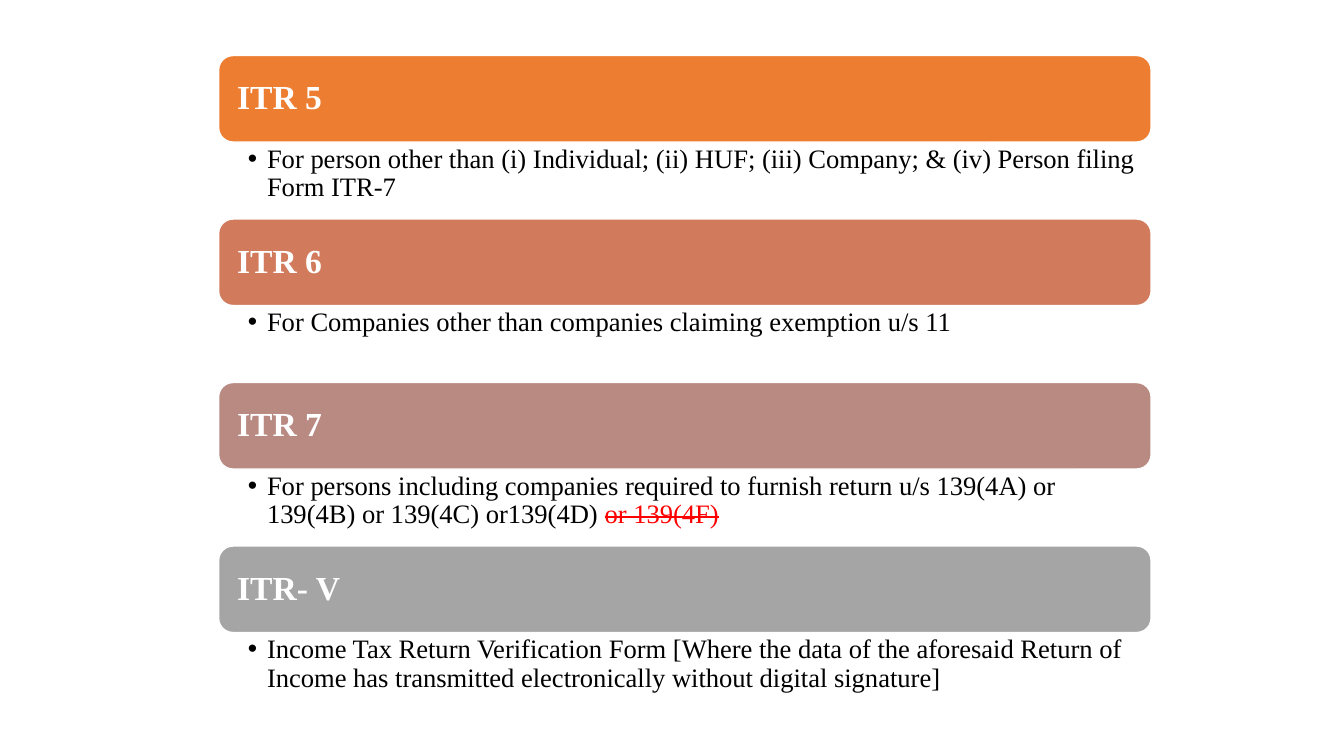
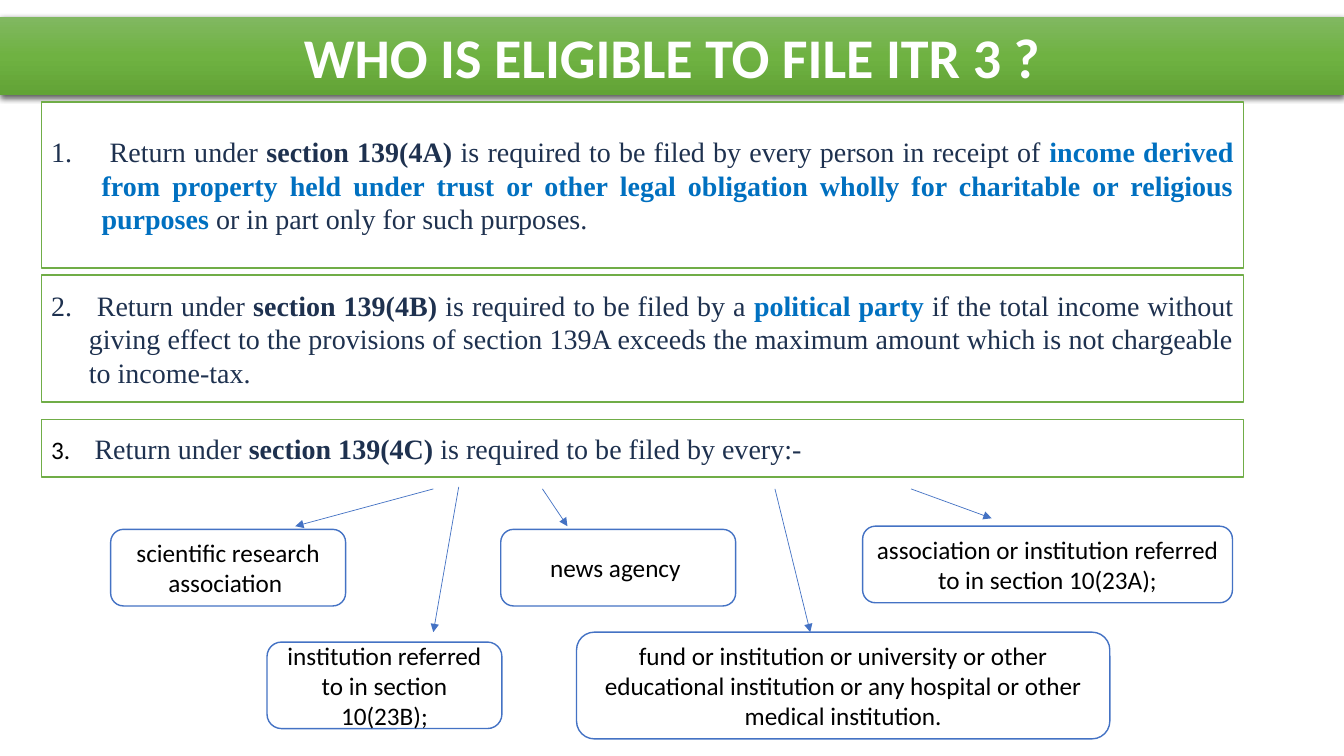
from lxml.etree import SubElement
from pptx import Presentation
from pptx.dml.color import RGBColor
from pptx.enum.shapes import MSO_CONNECTOR, MSO_SHAPE
from pptx.enum.text import MSO_ANCHOR, MSO_AUTO_SIZE, PP_ALIGN
from pptx.oxml.ns import qn
from pptx.util import Cm, Pt

SERIF, SANS = "Times New Roman", "Calibri"
WHITE, BLACK, RED = "FFFFFF", "000000", "FF0000"
GREEN, BLUE, NAVY, ACCENT = "70AD47", "4472C4", "1E314F", "0070C0"
BAND = [(0, "81B861"), (50, "6FB242"), (100, "62A336")]


def rgb(value):
    return RGBColor.from_string(value)


def add(parent, tag, **attrs):
    return SubElement(parent, qn(tag), {k: str(v) for k, v in attrs.items()})


class Deck:
    def __init__(self):
        self.prs = Presentation()
        self.prs.slide_width, self.prs.slide_height = Cm(33.87), Cm(19.05)
        self.s = None

    def slide(self, layout):
        self.s = self.prs.slides.add_slide(self.prs.slide_layouts[layout])

    def add_text(self, sp, runs, align=PP_ALIGN.LEFT, anchor=MSO_ANCHOR.MIDDLE, insets=None):
        tf = sp.text_frame
        tf.word_wrap, tf.auto_size, tf.vertical_anchor = True, MSO_AUTO_SIZE.NONE, anchor
        if insets:
            tf.margin_left, tf.margin_top, tf.margin_right, tf.margin_bottom = map(Cm, insets)
        p = tf.paragraphs[0]
        p.alignment = align
        for text, font, size, color, *marks in runs:
            r = p.add_run()
            r.text = text
            r.font.name, r.font.size = font, Pt(size)
            r.font.color.rgb = rgb(color)
            r.font.bold = "bold" in marks
            if "strike" in marks:
                r.font._element.set("strike", "sngStrike")
        return p

    def indent(self, p, width):
        pPr = p._p.get_or_add_pPr()
        pPr.set("marL", str(Cm(width)))
        pPr.set("indent", str(-Cm(width)))
        return pPr

    def title(self, text):
        sp = self.s.shapes.title
        sp.left, sp.top, sp.width, sp.height = Cm(0), Cm(0.43), self.prs.slide_width, Cm(1.96)
        spPr = sp._element.spPr
        grad = add(spPr, "a:gradFill", rotWithShape=1)
        stops = add(grad, "a:gsLst")
        for pos, color in BAND:
            add(add(stops, "a:gs", pos=pos * 1000), "a:srgbClr", val=color)
        add(grad, "a:lin", ang=5400000, scaled=0)
        shadow = add(add(spPr, "a:effectLst"), "a:outerShdw", blurRad=Pt(4.5), dist=Pt(1.5),
                     dir=5400000, algn="ctr", rotWithShape=0)
        add(add(shadow, "a:srgbClr", val=BLACK), "a:alpha", val=63000)
        self.add_text(sp, [(text, SANS, 40, WHITE, "bold")], PP_ALIGN.CENTER)

    def box(self, kind, at, fill, line):
        sp = self.s.shapes.add_shape(kind, *map(Cm, at))
        sp.shadow.inherit = False
        sp.fill.solid()
        sp.fill.fore_color.rgb = rgb(fill)
        sp.line.color.rgb = rgb(line)
        sp.line.width = Pt(1)
        return sp

    def form(self, top, name, color, runs):
        left, width, bar, body = 5.51, 23.5, 2.18, 1.93
        sp = self.box(MSO_SHAPE.ROUNDED_RECTANGLE, (left, top, width, bar), color, WHITE)
        p = self.add_text(sp, [(name, SERIF, 24, WHITE, "bold")], insets=(0.36, 0.25, 0.36, 0.25))
        p.line_spacing = 0.9
        tb = self.s.shapes.add_textbox(*map(Cm, (left, top + bar, width, body)))
        p = self.add_text(tb, runs, anchor=MSO_ANCHOR.TOP, insets=(0.74, 0.08, 0.38, 0.08))
        p.line_spacing = 0.9
        pPr = self.indent(p, 0.48)
        add(pPr, "a:buFont", typeface="Arial")
        add(pPr, "a:buChar", char="•")

    def clause(self, number, top, height, indent, runs, align):
        sp = self.box(MSO_SHAPE.RECTANGLE, (1.04, top, 30.3, height), WHITE, GREEN)
        pPr = self.indent(self.add_text(sp, runs, align), indent)
        add(pPr, "a:buFont", typeface="+mj-lt")
        add(pPr, "a:buAutoNum", type="arabicPeriod", startAt=number)

    def filer(self, at, text):
        sp = self.box(MSO_SHAPE.FLOWCHART_ALTERNATE_PROCESS, at, WHITE, BLUE)
        self.add_text(sp, [(text, SANS, 18, BLACK)], PP_ALIGN.CENTER)

    def arrow(self, *ends):
        cx = self.s.shapes.add_connector(MSO_CONNECTOR.STRAIGHT, *map(Cm, ends))
        cx.line.color.rgb = rgb(BLUE)
        cx.line.width = Pt(0.5)
        spPr = cx._element.spPr
        add(spPr.find(qn("a:ln")), "a:tailEnd", type="triangle")
        add(spPr, "a:effectLst")


def plain(text):
    return text, SERIF, 20, NAVY


def strong(text, color=NAVY):
    return text, SERIF, 20, color, "bold"


def note(text):
    return text, SERIF, 19, BLACK


def forms_slide(deck):
    deck.slide(6)
    forms = [
        ("ITR 5", "ED7D31", [note("For person other than (i) Individual; (ii) HUF; (iii) Company; "
                                  "& (iv) Person filing Form ITR-7")]),
        ("ITR 6", "D17B5C", [note("For Companies other than companies claiming exemption u/s 11")]),
        ("ITR 7", "B98A82", [note("For persons including companies required to furnish return "
                                  "u/s 139(4A) or 139(4B) or 139(4C) or139(4D) "),
                             ("or 139(4F)", SERIF, 19, RED, "strike")]),
        ("ITR- V", "A5A5A5", [note("Income Tax Return Verification Form [Where the data of the "
                                   "aforesaid Return of Income has transmitted electronically "
                                   "without digital signature]")]),
    ]
    for i, form in enumerate(forms):
        deck.form(1.4 + 4.12 * i, *form)


def eligibility_slide(deck):
    deck.slide(5)
    deck.title("WHO IS ELIGIBLE TO FILE ITR 3 ?")
    deck.clause(1, 2.57, 4.19, 1.27, [
        plain(" Return under "), strong("section 139(4A) "),
        plain("is required to be filed by every person in receipt of "),
        strong("income derived from property held under trust or other legal obligation "
               "wholly for charitable or religious purposes ", ACCENT),
        plain("or in part only for such purposes."),
    ], PP_ALIGN.JUSTIFY)
    deck.clause(2, 6.93, 3.2, 0.95, [
        plain(" Return under "), strong("section 139(4B) "),
        plain("is required to be filed by a "), strong("political party", ACCENT),
        plain(" if the total income without giving effect to the provisions of section 139A "
              "exceeds the maximum amount which is not chargeable to income-tax."),
    ], PP_ALIGN.JUSTIFY)
    deck.clause(3, 10.57, 1.45, 0.95, [
        (" ", SANS, 18, BLACK), plain("Return under "), strong("section 139(4C) "),
        plain("is required to be filed by every:-"),
    ], PP_ALIGN.LEFT)
    filers = [
        ((2.79, 13.34, 5.92, 1.93), "scientific research association "),
        ((6.73, 16.18, 5.92, 2.18), "institution referred to in section 10(23B);"),
        ((14.53, 15.93, 13.44, 2.69), "fund or institution or university or other educational "
                                      "institution or any hospital or other medical institution."),
        ((12.62, 13.34, 5.92, 1.93), "news agency "),
        ((21.74, 13.26, 9.32, 1.93), "association or institution referred to in section 10(23A);"),
    ]
    for at, text in filers:
        deck.filer(at, text)
    for ends in [(10.92, 12.32, 7.44, 13.26), (13.67, 12.32, 14.3, 13.26),
                 (22.96, 12.32, 24.99, 13.06), (11.56, 12.27, 10.92, 15.93),
                 (19.53, 12.32, 20.42, 15.93)]:
        deck.arrow(*ends)


def main():
    deck = Deck()
    forms_slide(deck)
    eligibility_slide(deck)
    deck.prs.save("out.pptx")


if __name__ == "__main__":
    main()
